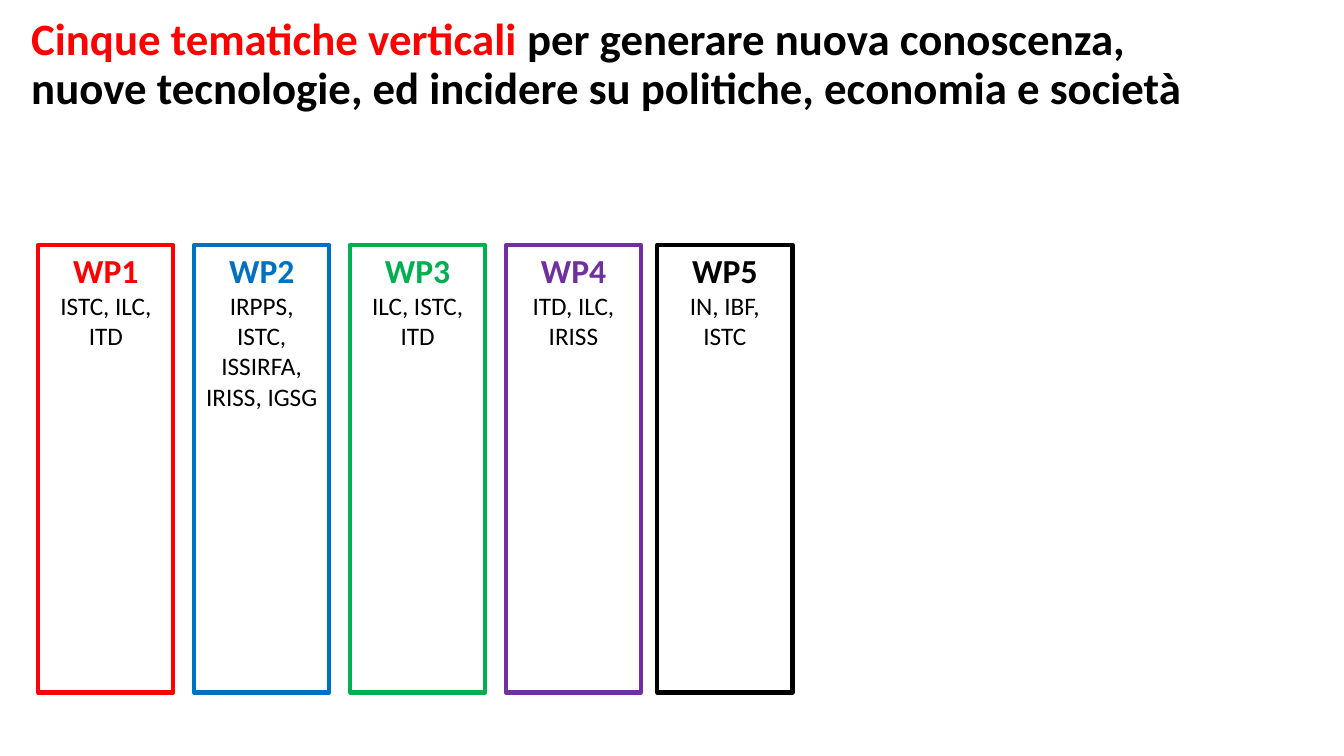
import pptx
import pptx.util
import pptx.dml.color
import pptx.enum.shapes
import pptx.enum.text

WIDE, HIGH = 13.33, 7.5
STEP = 1.546
PACKS = [
    ("WP1", "ISTC, ILC, ITD", "FF0000", 0),
    ("WP2", "IRPPS, ISTC, ISSIRFA, IRISS, IGSG", "0070C0", STEP),
    ("WP3", "ILC, ISTC, ITD", "00B050", 2 * STEP),
    ("WP4", "ITD, ILC, IRISS", "7030A0", 3 * STEP),
    ("WP5", "IN, IBF, ISTC", "000000", 6.14),
]


def paint(code):
    """Return the colour for a hex string."""
    return pptx.dml.color.RGBColor.from_string(code)


def write(para, text, size=18, color="000000", bold=False):
    """Add a formatted run to a paragraph."""
    run = para.add_run()
    run.text = text
    font = run.font
    font.name = "Calibri"
    font.size = pptx.util.Pt(size)
    font.bold = bold
    font.color.rgb = paint(color)


def setup(frame):
    """Make a text frame wrap from its top at a fixed size."""
    frame.word_wrap = True
    frame.auto_size = pptx.enum.text.MSO_AUTO_SIZE.NONE
    frame.vertical_anchor = pptx.enum.text.MSO_ANCHOR.TOP


def head(slide, box):
    """Fill the title placeholder within the box."""
    title = slide.shapes.title
    title.left, title.top, title.width, title.height = map(pptx.util.Inches, box)
    setup(title.text_frame)
    para = title.text_frame.paragraphs[0]
    para.alignment = pptx.enum.text.PP_ALIGN.LEFT
    para.line_spacing = 0.9
    write(para, "Cinque tematiche verticali ", size=32, color="FF0000", bold=True)
    write(para, "per generare nuova conoscenza, nuove tecnologie, "
          "ed incidere su politiche, economia e società", size=32, bold=True)


def pillar(slide, box, name, teams, color):
    """Draw one work package as an outlined column in the box."""
    shape = slide.shapes.add_shape(
        pptx.enum.shapes.MSO_SHAPE.RECTANGLE, *map(pptx.util.Inches, box))
    shape.shadow.inherit = False
    shape.fill.background()
    shape.line.color.rgb = paint(color)
    shape.line.width = pptx.util.Pt(3)
    frame = shape.text_frame
    setup(frame)
    first, second = frame.paragraphs[0], frame.add_paragraph()
    for para in (first, second):
        para.alignment = pptx.enum.text.PP_ALIGN.CENTER
    write(first, name, size=24, color=color, bold=True)
    write(second, teams)


def pillars(slide, box):
    """Place the work packages side by side in the box."""
    left, top, width, height = box
    for name, teams, color, shift in PACKS:
        place = (left + shift, top, width - PACKS[-1][3], height)
        pillar(slide, place, name, teams, color)


def main():
    """Build and save the slide."""
    deck = pptx.Presentation()
    deck.slide_width = pptx.util.Inches(WIDE)
    deck.slide_height = pptx.util.Inches(HIGH)
    slide = deck.slides.add_slide(deck.slide_layouts[5])
    pillars(slide, (0.38, 2.43, 7.48, 4.44))
    head(slide, (0.21, 0.12, 12.2, 1.36))
    deck.save("out.pptx")


if __name__ == "__main__":
    main()
